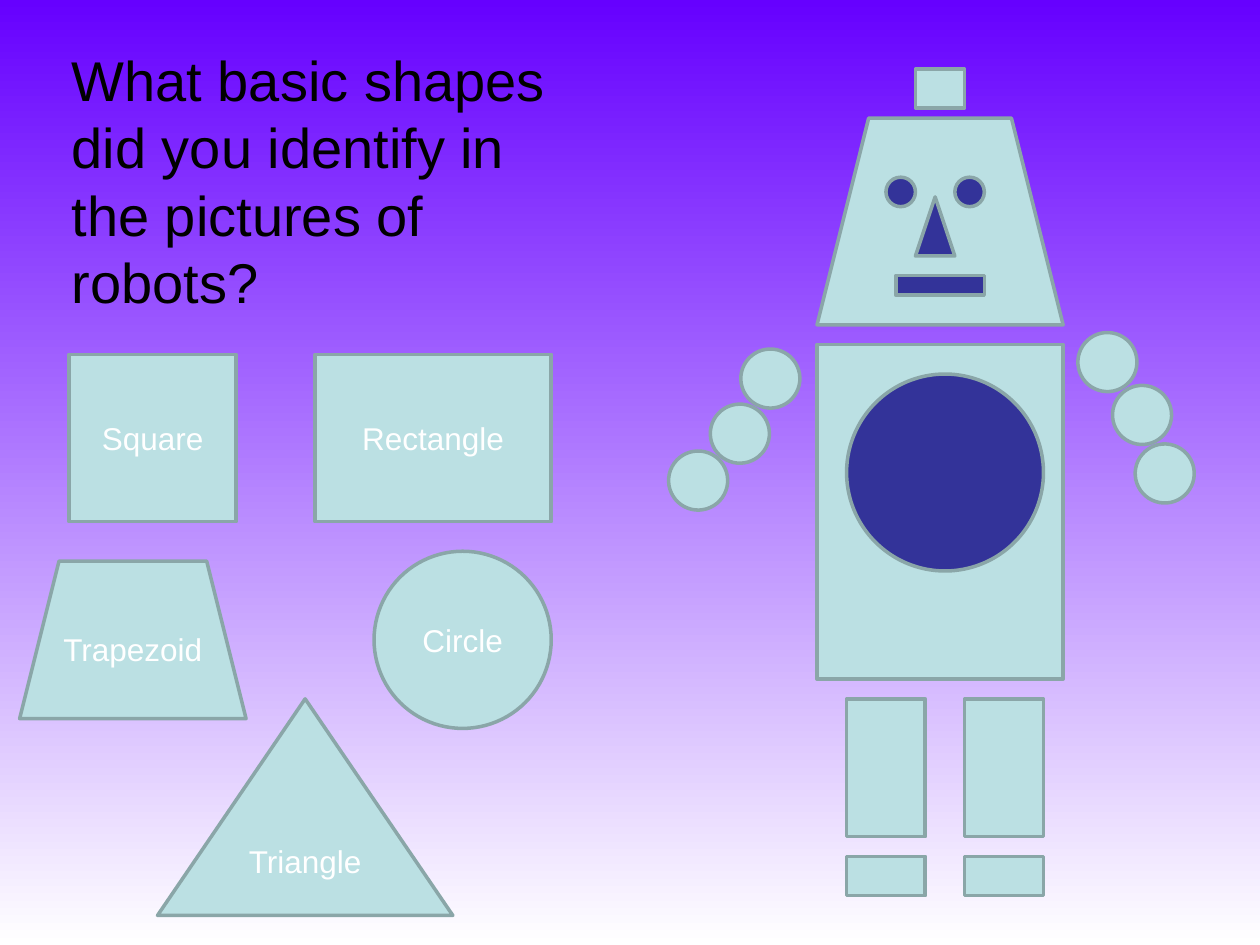
from pptx import Presentation
from pptx.dml.color import RGBColor
from pptx.enum.shapes import MSO_SHAPE
from pptx.enum.text import MSO_ANCHOR, PP_ALIGN
from pptx.util import Inches, Pt

COLORS = {
    "top": "6600FF", "bottom": "FFFFFF", "metal": "BBE0E3", "edge": "8AA6A8",
    "dark": "333399", "title": "000000", "label": "FFFFFF",
}
COLUMNS, ROWS = 128, 96
WIDTH, HEIGHT = Inches(10), Inches(7.5)
BALL = 6  # diameter of an arm joint, in grid cells


def color(name):
    return RGBColor.from_string(COLORS[name])


def grid(left, top, columns, rows):
    """Turn grid cells into a position and size on the slide."""
    return (round(WIDTH * left / COLUMNS), round(HEIGHT * top / ROWS),
            round(WIDTH * columns / COLUMNS), round(HEIGHT * rows / ROWS))


def write(frame, text, size=18, ink="label", align=PP_ALIGN.CENTER,
          anchor=MSO_ANCHOR.MIDDLE):
    frame.word_wrap = True
    frame.vertical_anchor = anchor
    para = frame.paragraphs[0]
    para.alignment = align
    span = para.add_run()
    span.text = text
    span.font.name = "Arial"
    span.font.size = Pt(size)
    span.font.color.rgb = color(ink)


def add_part(shapes, kind, cells, fill="metal", rotation=0, label=None):
    part = shapes.add_shape(kind, *grid(*cells))
    part.shadow.inherit = False
    part.fill.solid()
    part.fill.fore_color.rgb = color(fill)
    part.line.color.rgb = color("edge")
    part.line.width = Pt(2)
    part.rotation = rotation
    if label:
        write(part.text_frame, label)


def add_arm(page, joints, rotation):
    arm = page.shapes.add_group_shape()
    for left, top in joints:
        add_part(arm.shapes, MSO_SHAPE.OVAL, (left, top, BALL, BALL),
                 rotation=rotation)


def add_background(page):
    fill = page.background.fill
    fill.gradient()
    fill.gradient_angle = 270
    for stop, name, position in zip(fill.gradient_stops, ("top", "bottom"), (0, 1)):
        stop.color.rgb = color(name)
        stop.position = position


def add_title(page, text):
    title = page.shapes.title
    title.left, title.top, title.width, title.height = grid(6, 4, 52, 29)
    write(title.text_frame, text, size=32, ink="title",
          align=PP_ALIGN.LEFT, anchor=MSO_ANCHOR.TOP)


def add_robot(page):
    shapes = page.shapes
    # Body, head and chest
    add_part(shapes, MSO_SHAPE.RECTANGLE, (83, 35, 25, 34))
    add_part(shapes, MSO_SHAPE.TRAPEZOID, (83, 12, 25, 21))
    add_part(shapes, MSO_SHAPE.OVAL, (86, 38, 20, 20), fill="dark")
    # Legs, then feet
    for top, rows in ((71, 14), (87, 4)):
        for left in (86, 98):
            add_part(shapes, MSO_SHAPE.RECTANGLE, (left, top, 8, rows))
    # Left arm
    add_arm(page, ((75.26, 35.46), (72.16, 41.06), (67.92, 45.82)), 350.4)
    # Nose, mouth and eyes
    add_part(shapes, MSO_SHAPE.ISOSCELES_TRIANGLE, (93, 20, 4, 6), fill="dark")
    add_part(shapes, MSO_SHAPE.RECTANGLE, (91, 28, 9, 2), fill="dark")
    for left in (90, 97):
        add_part(shapes, MSO_SHAPE.OVAL, (left, 18, 3, 3), fill="dark")
    # Right arm
    add_arm(page, ((109.5, 33.78), (113.02, 39.15), (115.32, 45.1)), 287.9)
    # Antenna
    add_part(shapes, MSO_SHAPE.RECTANGLE, (93, 7, 5, 4))


def add_labelled_shapes(page):
    for label, kind, cells in (
        ("Square", MSO_SHAPE.RECTANGLE, (7, 36, 17, 17)),
        ("Rectangle", MSO_SHAPE.RECTANGLE, (32, 36, 24, 17)),
        ("Circle", MSO_SHAPE.OVAL, (38, 56, 18, 18)),
        ("Trapezoid", MSO_SHAPE.TRAPEZOID, (2, 57, 23, 16)),
        ("Triangle", MSO_SHAPE.ISOSCELES_TRIANGLE, (16, 71, 30, 22)),
    ):
        add_part(page.shapes, kind, cells, label=label)


def main():
    deck = Presentation()
    deck.slide_width, deck.slide_height = WIDTH, HEIGHT
    page = deck.slides.add_slide(deck.slide_layouts[5])
    add_background(page)
    add_title(page, "What basic shapes did you identify in the pictures of robots?")
    add_robot(page)
    add_labelled_shapes(page)
    deck.save("out.pptx")


if __name__ == "__main__":
    main()
